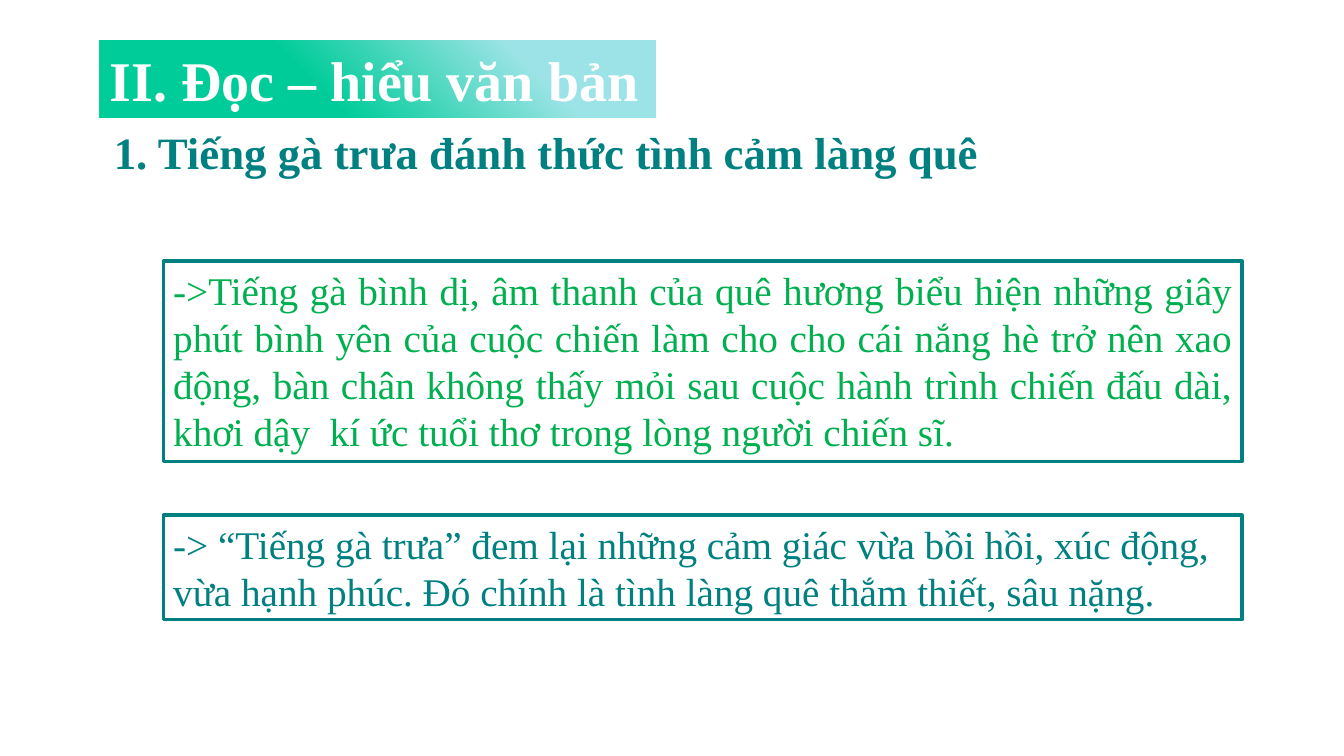
from dataclasses import dataclass

from pptx import Presentation
from pptx.dml.color import RGBColor as Rgb
from pptx.enum import shapes, text
from pptx import util as u

WIDE, HIGH = u.Inches(13.33), u.Inches(7.5)


@dataclass(frozen=True)
class Theme:
    font: str = "Times New Roman"
    white: str = "FFFFFF"
    teal: str = "008080"
    green: str = "00B050"
    mint: str = "00CC99"
    aqua: str = "9BE3E6"
    title: int = 40
    head: int = 32
    body: int = 28
    line: float = 2.25


LOOK = Theme()


def place(left, top, width, height):
    return (int(WIDE * left / 100), int(HIGH * top / 100),
            int(WIDE * width / 100), int(HIGH * height / 100))


def write(shape, words, size, color, bold=False, align=text.PP_ALIGN.LEFT):
    frame = shape.text_frame
    frame.word_wrap = True
    frame.auto_size = text.MSO_AUTO_SIZE.SHAPE_TO_FIT_TEXT
    frame.vertical_anchor = text.MSO_ANCHOR.TOP
    para = frame.paragraphs[0]
    para.alignment = align
    run = para.add_run()
    run.text = words
    font = run.font
    font.name, font.size, font.bold = LOOK.font, u.Pt(size), bold
    font.color.rgb = Rgb.from_string(color)
    return para


def block(slide, area):
    shape = slide.shapes.add_shape(shapes.MSO_SHAPE.RECTANGLE, *place(*area))
    shape.shadow.inherit = False
    return shape


def banner(slide, area, words):
    shape = block(slide, area)
    shape.line.fill.background()
    fill = shape.fill
    fill.gradient()
    fill.gradient_angle = 225
    shades = (0.24, LOOK.aqua), (0.61, LOOK.mint)
    for stop, (spot, color) in zip(fill.gradient_stops, shades):
        stop.position = spot
        stop.color.rgb = Rgb.from_string(color)
    write(shape, words, LOOK.title, LOOK.white, bold=True)


def heading(slide, area, words):
    box = slide.shapes.add_textbox(*place(*area))
    para = write(box, words, LOOK.head, LOOK.teal, bold=True)
    para.line_spacing = 1.15
    para.space_after = u.Pt(10)


def panel(slide, top, height, words, color, align):
    shape = block(slide, (12.15, top, 80.27, height))
    shape.fill.background()
    shape.line.color.rgb = Rgb.from_string(LOOK.teal)
    shape.line.width = u.Pt(LOOK.line)
    write(shape, words, LOOK.body, color, align=align)


def main():
    deck = Presentation()
    deck.slide_width, deck.slide_height = WIDE, HIGH
    slide = deck.slides.add_slide(deck.slide_layouts[6])
    banner(slide, (7.43, 5.33, 41.41, 10.27), "II. Đọc – hiểu văn bản")
    heading(slide, (7.73, 14.8, 86.87, 8.93),
            "1. Tiếng gà trưa đánh thức tình cảm làng quê")
    panel(slide, 34.53, 26.53,
          "->Tiếng gà bình dị, âm thanh của quê hương biểu hiện những giây "
          "phút bình yên của cuộc chiến làm cho cho cái nắng hè trở nên xao "
          "động, bàn chân không thấy mỏi sau cuộc hành trình chiến đấu dài, "
          "khơi dậy  kí ức tuổi thơ trong lòng người chiến sĩ.",
          LOOK.green, text.PP_ALIGN.JUSTIFY)
    panel(slide, 68.13, 13.87,
          "-> “Tiếng gà trưa” đem lại những cảm giác vừa bồi hồi, xúc động, "
          "vừa hạnh phúc. Đó chính là tình làng quê thắm thiết, sâu nặng.",
          LOOK.teal, text.PP_ALIGN.LEFT)
    deck.save("out.pptx")


if __name__ == "__main__":
    main()
